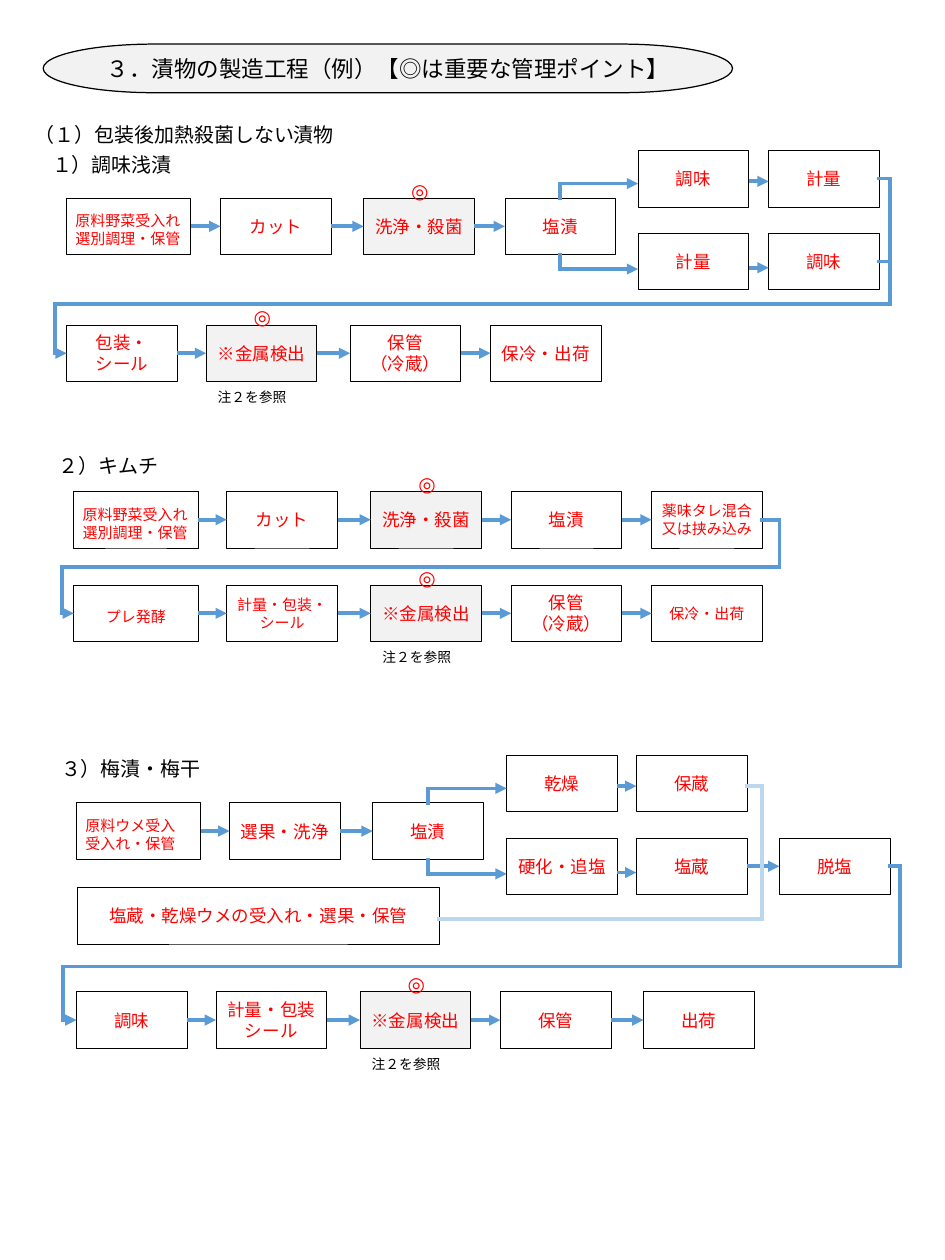
from pptx import Presentation
from pptx.dml.color import RGBColor
from pptx.enum.shapes import MSO_CONNECTOR, MSO_SHAPE
from pptx.enum.text import MSO_ANCHOR, PP_ALIGN
from pptx.oxml.ns import qn
from pptx.util import Inches, Pt
from lxml import etree

RECT, PILL = MSO_SHAPE.RECTANGLE, MSO_SHAPE.FLOWCHART_TERMINATOR
LINE, MIDDLE = MSO_CONNECTOR.STRAIGHT, MSO_ANCHOR.MIDDLE
LEFT, CENTER = PP_ALIGN.LEFT, PP_ALIGN.CENTER
TOP_SIDE, LEFT_SIDE, BOTTOM_SIDE, RIGHT_SIDE = range(4)

COLORS = {"ink": "000000", "step": "FF0000", "key": "F2F2F2",
          "flow": "5B9BD5", "merge": "BDD7EE"}
FONT = "Calibri"
BOX_W, WIDE_W, BOX_H = 1.23, 1.38, 0.63
BRANCH = 0.16          # distance from a box to its branch arrow

# Content
TITLE = "３．漬物の製造工程（例）【◎は重要な管理ポイント】"
HEADINGS = [  # left, top, width, text
    (0.29, 1.31, 3.57, "（１）包装後加熱殺菌しない漬物"),
    (0.48, 1.65, 1.55, "１）調味浅漬"),
    (0.55, 4.99, 1.32, "２）キムチ"),
    (0.58, 8.36, 1.77, "３）梅漬・梅干"),
]
KEY_STEPS = {"洗浄・殺菌", "※金属検出"}
KEY_MARK, NOTE = "◎", "注２を参照"
INTAKE = {"width": WIDE_W, "size": 12, "align": LEFT, "drop": 0.08}
SMALL = {"size": 12}

# Row name: top, arrow offset from the middle, steps (left, text, options)
ROWS = {
    "asazuke": (2.2, 0, [
        (0.74, "原料野菜受入れ\n選別調理・保管", INTAKE), (2.45, "カット", {}),
        (4.04, "洗浄・殺菌", {}), (5.61, "塩漬", {})]),
    "asazuke upper": (1.67, 0.03, [(7.09, "調味", {}), (8.54, "計量", {})]),
    "asazuke lower": (2.59, 0.07, [(7.09, "計量", {}), (8.54, "調味", {})]),
    "asazuke end": (3.61, 0, [
        (0.74, "包装・\nシール", {}), (2.29, "※金属検出", {}),
        (3.89, "保管\n（冷蔵）", {}), (5.45, "保冷・出荷", {})]),
    "kimchi": (5.46, 0, [
        (0.82, "原料野菜受入れ\n選別調理・保管", INTAKE), (2.52, "カット", {}),
        (4.12, "洗浄・殺菌", {}), (5.68, "塩漬", {}),
        (7.24, "薬味タレ混合\n又は挟み込み", SMALL)]),
    "kimchi end": (6.5, 0, [
        (0.82, "プレ発酵", {**INTAKE, "align": CENTER}),
        (2.52, "計量・包装・シール", SMALL), (4.12, "※金属検出", {}),
        (5.68, "保管\n（冷蔵）", {}), (7.24, "保冷・出荷", SMALL)]),
    "ume": (8.92, 0, [
        (0.85, "原料ウメ受入\n受入れ・保管", INTAKE), (2.55, "選果・洗浄", {}),
        (4.14, "塩漬", {})]),
    "ume upper": (8.39, 0.03, [(5.63, "乾燥", {}), (7.07, "保蔵", {})]),
    "ume lower": (9.31, 0.07, [(5.63, "硬化・追塩", {}), (7.07, "塩蔵", {})]),
    "ume desalt": (9.31, 0, [(8.66, "脱塩", {})]),
    "ume stock": (9.86, 0, [
        (0.86, "塩蔵・乾燥ウメの受入れ・選果・保管", {"width": 4.02})]),
    "ume end": (11.02, 0, [
        (0.85, "調味", {}), (2.4, "計量・包装\nシール", {}),
        (4, "※金属検出", {}), (5.56, "保管", {}), (7.15, "出荷", {})]),
}
SPLITS = ["asazuke", "ume"]
RETURNS = [  # last step's row, next row, right rail x, rail y, left rail x
    ("asazuke upper", "asazuke end", 9.89, 3.38, 0.61),
    ("kimchi", "kimchi end", 8.66, 6.3, 0.69),
    ("ume desalt", "ume end", 10, 10.74, 0.7),
]

prs = Presentation()
prs.slide_width, prs.slide_height = Inches(10.5), Inches(14)
shapes = prs.slides.add_slide(prs.slide_layouts[6]).shapes


def rgb(name):
    return RGBColor.from_string(COLORS[name])


def write(sp, text, size, color, align=LEFT):
    tf = sp.text_frame
    for i, line in enumerate(text.split("\n")):
        p = tf.paragraphs[0] if i == 0 else tf.add_paragraph()
        p.text, p.alignment = line, align
        p.font.name, p.font.size = FONT, Pt(size)
        p.font.color.rgb = rgb(color)


def label(x, y, w, h, text, size, color="ink", wrap=False):
    sp = shapes.add_textbox(*map(Inches, (x, y, w, h)))
    sp.text_frame.word_wrap = wrap
    write(sp, text, size, color)


def box(kind, x, y, w, h, filled, weight):
    sp = shapes.add_shape(kind, *map(Inches, (x, y, w, h)))
    sp.shadow.inherit = False
    if filled:
        sp.fill.solid()
        sp.fill.fore_color.rgb = rgb("key")
    else:
        sp.fill.background()
    sp.line.color.rgb, sp.line.width = rgb("ink"), Pt(weight)
    sp.text_frame.vertical_anchor = MIDDLE
    sp.text_frame.word_wrap = True
    return sp


def step(x, y, text, width=BOX_W, size=14, align=CENTER, drop=0):
    key = text in KEY_STEPS
    sp = box(RECT, x, y, width, BOX_H, key, 0.5)
    sp.text_frame.margin_top = Inches(0.05 + drop)
    write(sp, text, size, "step", align)
    if key:
        label(x + 0.43, y - 0.27, 0.33, 0.37, KEY_MARK, 16, "step", True)
    if text.startswith("※"):
        label(x + 0.03, y + 0.66, 0.97, 0.29, NOTE, 11)
    return sp


def side(sp, n, dy=0):
    """Middle of a side in inches, moved down by dy."""
    x, y = sp.left.inches, sp.top.inches
    w, h = sp.width.inches, sp.height.inches
    fx, fy = [(0.5, 0), (0, 0.5), (0.5, 1), (1, 0.5)][n]
    return x + w * fx, y + h * fy + dy


def route(points, color="flow", arrow=True, begin=None, end=None):
    """Straight pieces through the points; begin and end are (shape, side)."""
    last = len(points) - 2
    for i, (a, b) in enumerate(zip(points, points[1:])):
        c = shapes.add_connector(LINE, *map(Inches, (*a, *b)))
        c.line.color.rgb, c.line.width = rgb(color), Pt(3)
        if begin and i == 0:
            c.begin_connect(*begin)
        if end and i == last:
            c.end_connect(*end)
        ln = c.line._get_or_add_ln()
        if arrow and i == last:
            etree.SubElement(ln, qn("a:tailEnd"), type="triangle")
        else:
            ln.set("cap", "sq")  # closes the corners
        etree.SubElement(c._element.spPr, qn("a:effectLst"))


def link(a, b, dy=0):
    glue = {} if dy else {"begin": (a, RIGHT_SIDE), "end": (b, LEFT_SIDE)}
    route([side(a, RIGHT_SIDE, dy), side(b, LEFT_SIDE, dy)], **glue)


# Title and headings
title = box(PILL, 0.48, 0.49, 7.66, 0.54, True, 1)
write(title, TITLE, 18, "ink", CENTER)
for x, y, w, text in HEADINGS:
    label(x, y, w, 0.37, text, 16)

# Steps, with an arrow from each to the next
rows = {}
for name, (top, dy, steps) in ROWS.items():
    rows[name] = [step(x, top, text, **opts) for x, text, opts in steps]
    for a, b in zip(rows[name], rows[name][1:]):
        link(a, b, dy)

# Branches to the upper and lower rows
for name in SPLITS:
    salting = rows[name][-1]
    for lane, n, dy in (("upper", TOP_SIDE, -BRANCH), ("lower", BOTTOM_SIDE, BRANCH)):
        x, y = side(salting, n)
        target_x = side(rows[f"{name} {lane}"][0], LEFT_SIDE)[0]
        route([(x, y), (x, y + dy), (target_x, y + dy)], begin=(salting, n))

# Return lines to the next row
for start, following, right, rail, left in RETURNS:
    a, b = rows[start][-1], rows[following][0]
    x, y = side(a, RIGHT_SIDE)
    end = side(b, LEFT_SIDE)
    route([(x, y), (right, y), (right, rail), (left, rail), (left, end[1]), end],
          begin=(a, RIGHT_SIDE), end=(b, LEFT_SIDE))
lower = rows["asazuke lower"][-1]
x, y = side(lower, RIGHT_SIDE)
route([(x, y), (9.89, y)], arrow=False, begin=(lower, RIGHT_SIDE))

# Dried and stocked plums join before desalting
link(rows["ume lower"][-1], rows["ume desalt"][0])
x, y = side(rows["ume upper"][-1], RIGHT_SIDE, 0.03)
stock = side(rows["ume stock"][0], RIGHT_SIDE, 0.04)
route([(x, y), (8.47, y), (8.47, stock[1]), stock], "merge", arrow=False)

prs.save("out.pptx")
